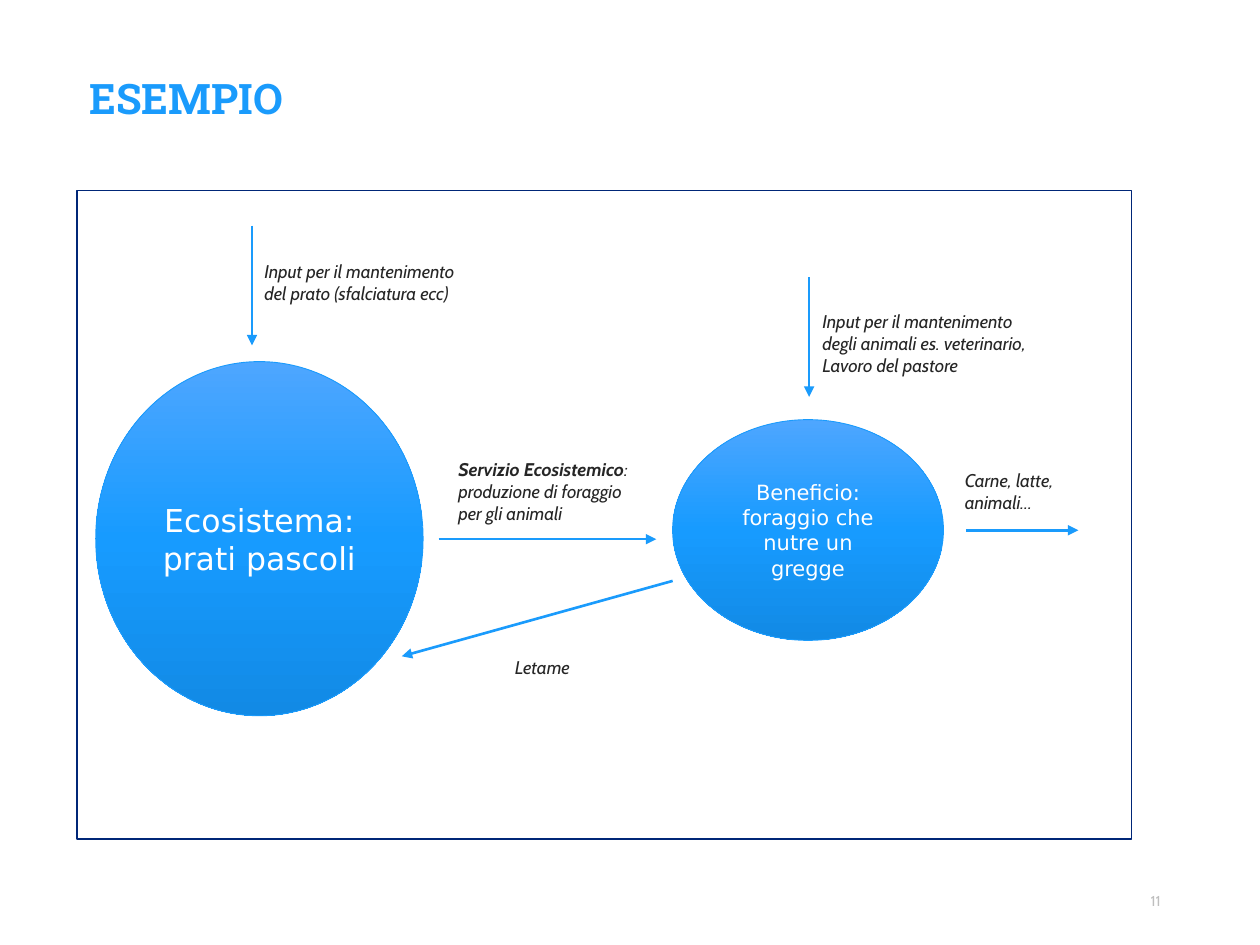
from lxml import etree
from pptx import Presentation
from pptx.dml.color import RGBColor
from pptx.enum.shapes import MSO_CONNECTOR as Connector, MSO_SHAPE as Preset
from pptx.enum.text import MSO_ANCHOR as Anchor, MSO_AUTO_SIZE as AutoSize, PP_ALIGN as Align
from pptx.oxml import parse_xml
from pptx.oxml.ns import nsdecls, qn
from pptx.util import Cm, Pt

BLUE = RGBColor(0x1A, 0x9B, 0xFC)
NAVY = RGBColor(0x00, 0x26, 0x77)
INK = RGBColor(0x26, 0x26, 0x26)
GRAY = RGBColor(0xBF, 0xBF, 0xBF)
WHITE = RGBColor(0xFF, 0xFF, 0xFF)
GRADIENT = ((0, RGBColor(0x4E, 0xA6, 0xFF)),
            (50, RGBColor(0x17, 0x9B, 0xFF)),
            (100, RGBColor(0x12, 0x8A, 0xE5)))


class Diagram:
    """Holds the fonts and the slide; all lengths are in centimetres."""
    title_font = "Roboto Slab"
    label_font = "Cabin"
    node_font = "DejaVu Sans"

    def __init__(self, slide):
        self.slide = slide
        self.shapes = slide.shapes

    def add_run(self, paragraph, text, font, size, color, bold=False, italic=False):
        run = paragraph.add_run()
        run.text = text
        run.font.name = font
        run.font.size = Pt(size)
        run.font.color.rgb = color
        run.font.bold = bold
        run.font.italic = italic

    def title(self, text, left, top, width, height):
        shape = self.shapes.title
        shape.left, shape.top = Cm(left), Cm(top)
        shape.width, shape.height = Cm(width), Cm(height)
        frame = shape.text_frame
        frame.auto_size = AutoSize.NONE
        frame.vertical_anchor = Anchor.MIDDLE
        paragraph = frame.paragraphs[0]
        paragraph.alignment = Align.LEFT
        paragraph.line_spacing = 0.9
        self.add_run(paragraph, text, self.title_font, 24, BLUE, bold=True)

    def text_box(self, left, top, width, height):
        box = self.shapes.add_textbox(Cm(left), Cm(top), Cm(width), Cm(height))
        frame = box.text_frame
        frame.word_wrap = True
        frame.vertical_anchor = Anchor.MIDDLE
        return frame

    def label(self, lines, left, top, width, height=2.54, lead=""):
        """Italic lines, the first one opened by a bold lead."""
        frame = self.text_box(left, top, width, height)
        for index, line in enumerate(lines):
            paragraph = frame.add_paragraph() if index else frame.paragraphs[0]
            if lead and index == 0:
                self.add_run(paragraph, lead, self.label_font, 10.5, INK, bold=True, italic=True)
            self.add_run(paragraph, line, self.label_font, 10.5, INK, italic=True)

    def page_number(self, text, left, top, width, height):
        paragraph = self.text_box(left, top, width, height).paragraphs[0]
        paragraph.alignment = Align.RIGHT
        self.add_run(paragraph, text, self.label_font, 8.2, GRAY)

    def node(self, text, size, left, top, width, height):
        shape = self.shapes.add_shape(Preset.OVAL, Cm(left), Cm(top), Cm(width), Cm(height))
        shape.shadow.inherit = False
        shape.line.color.rgb = BLUE
        shape.line.width = Pt(0.5)
        self.fill_gradient(shape)
        frame = shape.text_frame
        frame.word_wrap = True
        frame.vertical_anchor = Anchor.MIDDLE
        paragraph = frame.paragraphs[0]
        paragraph.alignment = Align.CENTER
        self.add_run(paragraph, text, self.node_font, size, WHITE)

    def fill_gradient(self, shape):
        """Vertical gradient with three stops, one more than the library offers."""
        shape.fill.gradient()
        shape.fill.gradient_angle = 270
        stops = shape._element.spPr.find(qn("a:gradFill")).find(qn("a:gsLst"))
        for stop in list(stops):
            stops.remove(stop)
        for percent, color in GRADIENT:
            stops.append(parse_xml(
                f'<a:gs {nsdecls("a")} pos="{percent * 1000}"><a:srgbClr val="{color}"/></a:gs>'))

    def frame(self, left, top, width, height):
        shape = self.shapes.add_shape(Preset.RECTANGLE, Cm(left), Cm(top), Cm(width), Cm(height))
        shape.shadow.inherit = False
        shape.fill.background()
        shape.line.color.rgb = NAVY
        shape.line.width = Pt(1)

    def arrow(self, x1, y1, x2, y2):
        connector = self.shapes.add_connector(
            Connector.STRAIGHT, Cm(x1), Cm(y1), Cm(x2), Cm(y2))
        connector.line.color.rgb = BLUE
        connector.line.width = Pt(1.5)
        etree.SubElement(connector.line._get_or_add_ln(), qn("a:tailEnd"), type="triangle")
        etree.SubElement(connector._element.spPr, qn("a:effectLst"))


def main():
    presentation = Presentation()
    presentation.slide_width, presentation.slide_height = Cm(25.4), Cm(19.05)
    title_only = presentation.slide_layouts[5]
    diagram = Diagram(presentation.slides.add_slide(title_only))

    diagram.page_number("11", 17.93, 17.65, 5.72, 1.02)
    diagram.title("ESEMPIO", 1.55, 0.97, 21.89, 2.11)

    diagram.node("Ecosistema: prati pascoli", 18, 1.93, 7.29, 6.6, 7.14)
    diagram.node("Beneficio: foraggio che nutre un gregge", 12, 13.56, 8.46, 5.46, 4.45)

    diagram.arrow(8.84, 10.87, 13.23, 10.87)
    diagram.label([":", "produzione di foraggio", "per gli animali"],
                  8.99, 8.31, 4.45, 3.2, lead="Servizio Ecosistemico")
    diagram.arrow(5.08, 4.55, 5.08, 6.96)
    diagram.label(["Input per il mantenimento", "degli animali es. veterinario,",
                   "Lavoro del pastore"], 16.33, 5.64, 5)
    diagram.arrow(19.48, 10.69, 21.74, 10.69)
    diagram.label(["Carne, latte,", "animali…"], 19.2, 8.64, 2.54)
    diagram.arrow(13.56, 11.71, 8.1, 13.23)
    diagram.label(["Letame"], 10.13, 12.17, 2.54)
    diagram.frame(1.55, 3.84, 21.26, 13.08)
    diagram.label(["Input per il mantenimento", "del prato (sfalciatura ecc)"],
                  5.08, 4.42, 5)
    diagram.arrow(16.31, 5.59, 16.31, 8)

    presentation.save("out.pptx")


if __name__ == "__main__":
    main()
